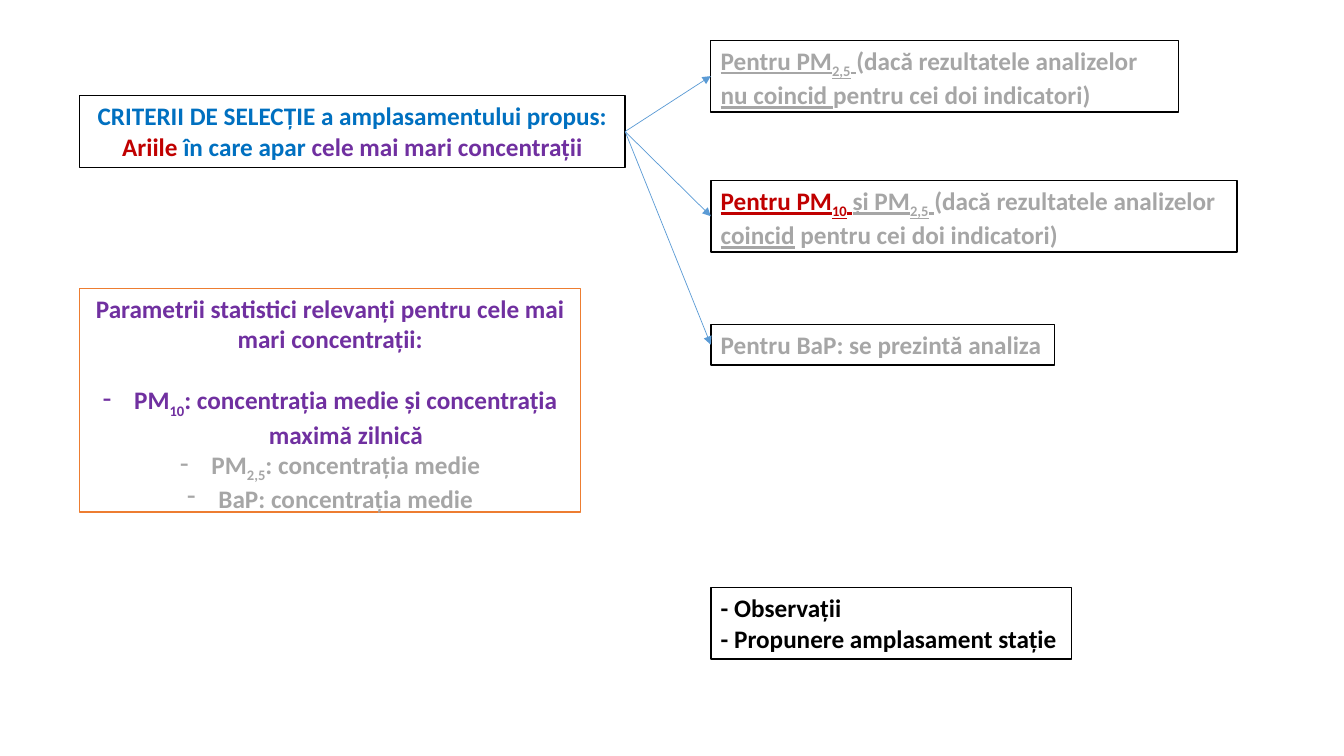
from dataclasses import dataclass
from typing import Any, NamedTuple

from lxml import etree
from pptx import Presentation
from pptx import util as u
from pptx.dml.color import RGBColor
from pptx.enum import shapes, text
from pptx.oxml import ns

PX = 9144  # EMU per px, 100 px to the inch


@dataclass(frozen=True)
class Theme:
    font: str = "Calibri"
    size: float = 18
    gap: float = 22
    border: float = 1
    arrow_width: float = 0.5
    white: str = "FFFFFF"
    black: str = "000000"
    blue: str = "0070C0"
    red: str = "C00000"
    purple: str = "7030A0"
    grey: str = "A6A6A6"
    orange: str = "ED7D31"
    arrow: str = "5B9BD5"


T = Theme()


class Run(NamedTuple):
    text: str
    color: str
    underline: bool = False
    sub: bool = False


class Para(NamedTuple):
    runs: list[Run]
    bullet: bool = False
    space_after: float = 0


class Box(NamedTuple):
    left: int
    top: int
    width: int
    height: int
    paras: list[Para]
    centred: bool = False
    border: str = T.black


def px(n: int) -> u.Emu:
    return u.Emu(n * PX)


def rgb(color: str) -> RGBColor:
    return RGBColor.from_string(color)


def pm(before: str, index: str, after: str, color: str, underline: bool = False) -> list[Run]:
    """Runs for a particulate-matter name whose size class is a subscript."""
    return [Run(before + "PM", color, underline), Run(index, color, underline, True),
            Run(after, color, underline)]


def set_all(target: Any, values: dict[str, Any]) -> None:
    for name, value in values.items():
        setattr(target, name, value)


def add_run(p: Any, run: Run) -> None:
    r = p.add_run()
    r.text = run.text
    set_all(r.font, {"name": T.font, "size": u.Pt(T.size), "bold": True,
                     "underline": run.underline})
    r.font.color.rgb = rgb(run.color)
    if run.sub:
        r._r.get_or_add_rPr().set("baseline", "-25000")


def add_bullet(p: Any) -> None:
    pPr = p._p.get_or_add_pPr()
    pPr.set("marL", str(px(31)))
    pPr.set("indent", str(-px(31)))
    etree.SubElement(pPr, ns.qn("a:buFontTx"))
    etree.SubElement(pPr, ns.qn("a:buChar")).set("char", "-")


def add_box(s: Any, box: Box) -> Any:
    sp = s.shapes.add_shape(shapes.MSO_SHAPE.RECTANGLE, px(box.left), px(box.top),
                            px(box.width), px(box.height))
    sp.shadow.inherit = False
    sp.fill.solid()
    sp.fill.fore_color.rgb = rgb(T.white)
    sp.line.color.rgb = rgb(box.border)
    sp.line.width = u.Pt(T.border)
    tf = sp.text_frame
    set_all(tf, {"word_wrap": True, "auto_size": text.MSO_AUTO_SIZE.SHAPE_TO_FIT_TEXT,
                 "vertical_anchor": text.MSO_ANCHOR.TOP})
    align = text.PP_ALIGN.CENTER if box.centred else text.PP_ALIGN.LEFT
    for i, para in enumerate(box.paras):
        p = tf.add_paragraph() if i else tf.paragraphs[0]
        set_all(p, {"alignment": align, "space_after": u.Pt(para.space_after)})
        if para.bullet:
            add_bullet(p)
        for run in para.runs:
            add_run(p, run)
    return sp


def add_arrow(s: Any, start: Any, end: Any) -> None:
    """Arrow from the right side of start to the left side of end."""
    c = s.shapes.add_connector(shapes.MSO_CONNECTOR.STRAIGHT, 0, 0, 0, 0)
    c.begin_connect(start, 3)
    c.end_connect(end, 1)
    c.line.color.rgb = rgb(T.arrow)
    c.line.width = u.Pt(T.arrow_width)
    etree.SubElement(c.line._get_or_add_ln(), ns.qn("a:tailEnd")).set("type", "triangle")
    etree.SubElement(c._element.spPr, ns.qn("a:effectLst"))


LEFT, RIGHT = 79, 705

CRITERIA = Box(LEFT, 95, 541, 71, [
    Para([Run("CRITERII DE SELECȚIE a amplasamentului propus:", T.blue)]),
    Para([Run("Ariile", T.red), Run(" în care apar ", T.blue),
          Run("cele mai mari concentrații", T.purple)]),
], centred=True)

PARAMETERS = Box(LEFT, 286, 497, 222, [
    Para([Run("Parametrii statistici relevanți pentru cele mai mari concentrații:", T.purple)],
         space_after=T.gap),
    Para(pm("", "10", ": concentrația medie și concentrația maximă zilnică", T.purple), True),
    Para(pm("", "2,5", ": concentrația medie", T.grey), True),
    Para([Run("BaP: concentrația medie", T.grey)], True),
], centred=True, border=T.orange)

PROPOSAL = Box(RIGHT, 583, 358, 71, [
    Para([Run("- Observații", T.black)]),
    Para([Run("- Propunere amplasament stație", T.black)]),
])

ANALYSES = [
    Box(RIGHT, 40, 464, 71, [Para([
        *pm("Pentru ", "2,5", " ", T.grey, True),
        Run("(dacă rezultatele analizelor ", T.grey),
        Run("nu coincid ", T.grey, True),
        Run("pentru cei doi indicatori)", T.grey)])]),
    Box(RIGHT, 179, 522, 71, [Para([
        *pm("Pentru ", "10", " ", T.red, True),
        *pm("și ", "2,5", " ", T.grey, True),
        Run("(dacă rezultatele analizelor ", T.grey),
        Run("coincid", T.grey, True),
        Run(" pentru cei doi indicatori)", T.grey)])]),
    Box(RIGHT, 322, 341, 40, [Para([Run("Pentru BaP: se prezintă analiza", T.grey)])]),
]


def main() -> None:
    prs = Presentation()
    set_all(prs, {"slide_width": px(1333), "slide_height": px(750)})
    s = prs.slides.add_slide(prs.slide_layouts[6])
    criteria = add_box(s, CRITERIA)
    add_box(s, PARAMETERS)
    add_box(s, PROPOSAL)
    analyses = [add_box(s, box) for box in ANALYSES]
    for analysis in analyses:
        add_arrow(s, criteria, analysis)
    prs.save("out.pptx")


if __name__ == "__main__":
    main()
